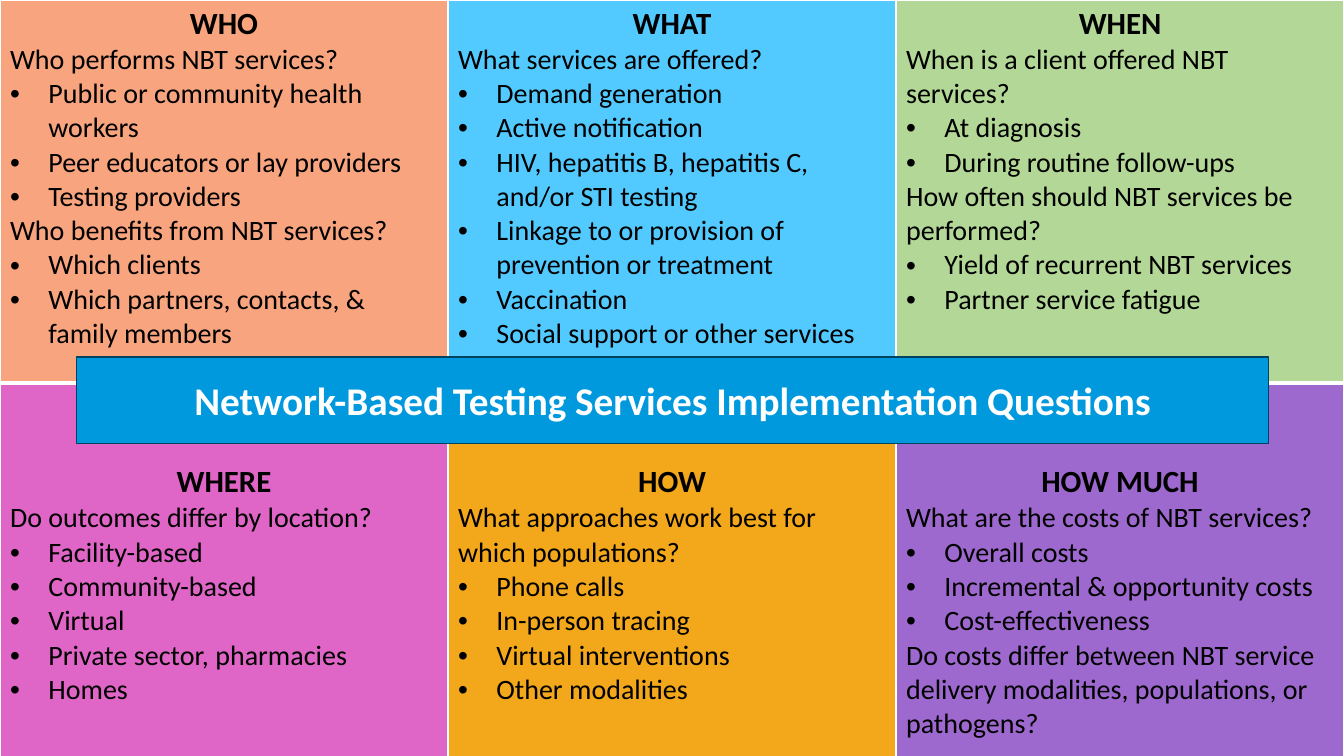
import pptx
import pptx.dml.color
import pptx.enum.shapes
import pptx.enum.text
import pptx.util
import lxml.etree

Inches = pptx.util.Inches
Pt = pptx.util.Pt
ALIGN = pptx.enum.text.PP_ALIGN
MIDDLE = pptx.enum.text.MSO_ANCHOR.MIDDLE
NS = "http://schemas.openxmlformats.org/drawingml/2006/main"

HEAD = {"name": "Calibri", "size": Pt(22), "bold": True}
BODY = {"name": "Calibri", "size": Pt(20), "bold": False}
TITLE = {"name": "Calibri", "size": Pt(28), "bold": True}

TOPICS = [
    [
        ("WHO", "F7A47F", [
            "Who performs NBT services?",
            "• Public or community health workers",
            "• Peer educators or lay providers",
            "• Testing providers",
            "Who benefits from NBT services?",
            "• Which clients",
            "• Which partners, contacts, & family members",
        ]),
        ("WHAT", "52CAFF", [
            "What services are offered?",
            "• Demand generation",
            "• Active notification",
            "• HIV, hepatitis B, hepatitis C, and/or STI testing",
            "• Linkage to or provision of prevention or treatment",
            "• Vaccination",
            "• Social support or other services",
        ]),
        ("WHEN", "B3D796", [
            "When is a client offered NBT services?",
            "• At diagnosis",
            "• During routine follow-ups",
            "How often should NBT services be performed?",
            "• Yield of recurrent NBT services",
            "• Partner service fatigue",
        ]),
    ],
    [
        ("WHERE", "DF65C7", [
            "Do outcomes differ by location?",
            "• Facility-based",
            "• Community-based",
            "• Virtual",
            "• Private sector, pharmacies",
            "• Homes",
        ]),
        ("HOW", "F3A81C", [
            "What approaches work best for which populations?",
            "• Phone calls",
            "• In-person tracing",
            "• Virtual interventions",
            "• Other modalities",
        ]),
        ("HOW MUCH", "9E69CE", [
            "What are the costs of NBT services?",
            "• Overall costs",
            "• Incremental & opportunity costs",
            "• Cost-effectiveness",
            "Do costs differ between NBT service delivery modalities, "
            "populations, or pathogens?",
        ]),
    ],
]
ROWS = [
    {"height": 3.8, "top": 0.05, "edges": {"L": 1, "R": 1, "T": 1, "B": 3}},
    {"height": 3.75, "top": 0.8, "edges": {"L": 1, "R": 1, "T": 3, "B": 1}},
]


def tint(part, color):
    part.rgb = pptx.dml.color.RGBColor.from_string(color)


def paint(fill, color):
    fill.solid()
    tint(fill.fore_color, color)


def write(para, text, style, color, align):
    para.alignment = align
    run = para.add_run()
    run.text = text
    for key, value in style.items():
        setattr(run.font, key, value)
    tint(run.font.color, color)


def bullet(para):
    props = para._p.get_or_add_pPr()
    indent = Inches(0.38)
    props.set("marL", str(indent))
    props.set("indent", str(-indent))
    font = lxml.etree.SubElement(props, f"{{{NS}}}buFont")
    font.set("typeface", "Arial")
    mark = lxml.etree.SubElement(props, f"{{{NS}}}buChar")
    mark.set("char", "•")


def border(cell, edges):
    props = cell._tc.get_or_add_tcPr()
    for side, width in edges.items():
        line = lxml.etree.SubElement(props, f"{{{NS}}}ln{side}")
        line.set("w", str(Pt(width)))
        fill = lxml.etree.SubElement(line, f"{{{NS}}}solidFill")
        color = lxml.etree.SubElement(fill, f"{{{NS}}}srgbClr")
        color.set("val", "FFFFFF")


def fill_cell(cell, topic, row):
    head, color, lines = topic
    border(cell, row["edges"])
    paint(cell.fill, color)
    cell.margin_top = Inches(row["top"])
    frame = cell.text_frame
    write(frame.paragraphs[0], head, HEAD, "000000", ALIGN.CENTER)
    for line in lines:
        para = frame.add_paragraph()
        if line.startswith("• "):
            bullet(para)
        write(para, line.removeprefix("• "), BODY, "000000", ALIGN.LEFT)


def add_grid(slide):
    height = sum(row["height"] for row in ROWS)
    frame = slide.shapes.add_table(
        2, 3, 0, 0, Inches(13.33), Inches(height))
    table = frame.table
    table.first_row = False
    table.horz_banding = False
    for i, row in enumerate(ROWS):
        table.rows[i].height = Inches(row["height"])
        for j, topic in enumerate(TOPICS[i]):
            fill_cell(table.cell(i, j), topic, row)


def add_banner(slide, text):
    shape = slide.shapes.add_shape(
        pptx.enum.shapes.MSO_SHAPE.RECTANGLE,
        Inches(0.76), Inches(3.54), Inches(11.82), Inches(0.86))
    shape.shadow.inherit = False
    paint(shape.fill, "0099DD")
    tint(shape.line.color, "004361")
    shape.line.width = Pt(1)
    frame = shape.text_frame
    frame.word_wrap = True
    frame.vertical_anchor = MIDDLE
    write(frame.paragraphs[0], text, TITLE, "FFFFFF", ALIGN.CENTER)


def main():
    deck = pptx.Presentation()
    deck.slide_width = Inches(13.33)
    deck.slide_height = Inches(7.5)
    slide = deck.slides.add_slide(deck.slide_layouts[6])
    add_grid(slide)
    add_banner(
        slide, "Network-Based Testing Services Implementation Questions")
    deck.save("out.pptx")


if __name__ == "__main__":
    main()
